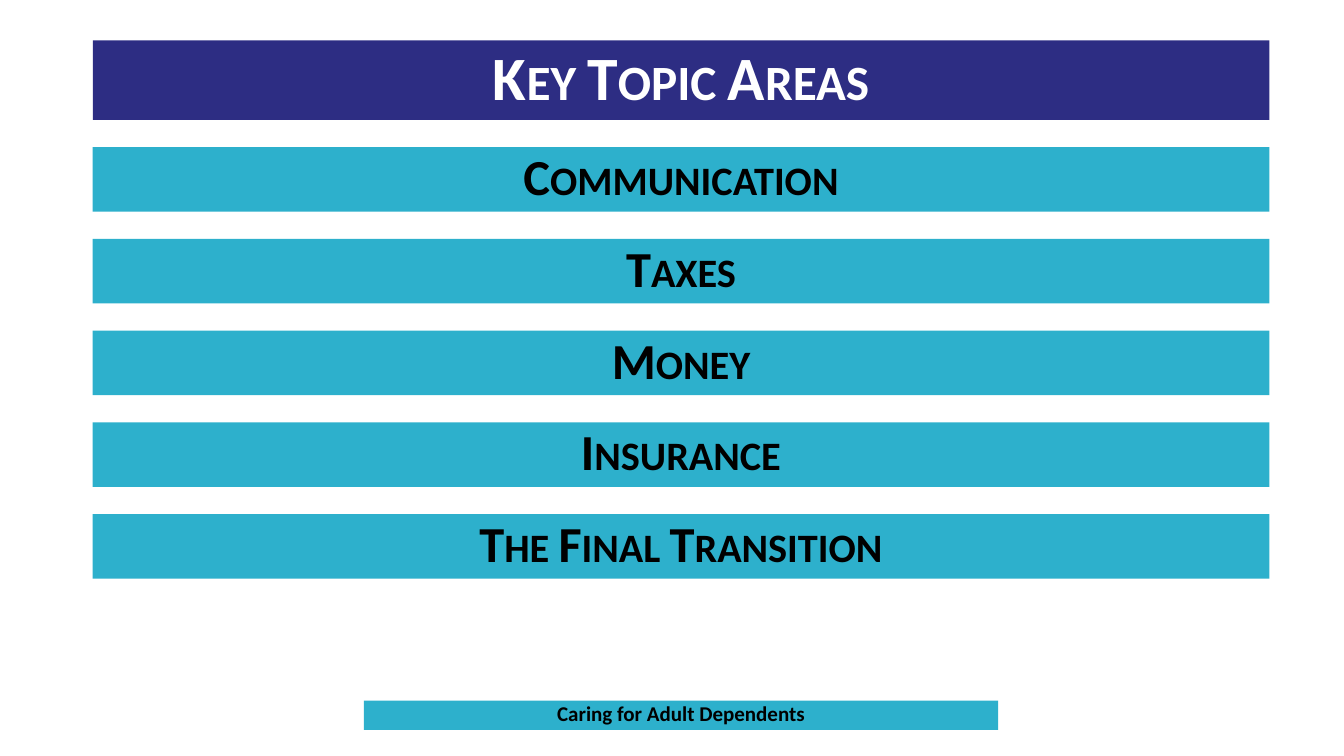
from dataclasses import dataclass

from pptx import Presentation
from pptx.dml.color import RGBColor
from pptx.enum.shapes import MSO_SHAPE
from pptx.enum.text import MSO_ANCHOR, MSO_AUTO_SIZE, PP_ALIGN
from pptx.shapes.autoshape import Shape
from pptx.slide import Slide
from pptx.util import Inches, Pt

NAVY = RGBColor(0x2D, 0x2D, 0x83)
TEAL = RGBColor(0x2D, 0xB0, 0xCC)
WHITE = RGBColor(0xFF, 0xFF, 0xFF)
BLACK = RGBColor(0x00, 0x00, 0x00)

SLIDE_W, SLIDE_H = 13.33, 7.5
CENTER = 6.755
BAR_W = 11.67
TOPIC_TOP, TOPIC_H, TOPIC_PITCH = 1.46, 0.64, 0.91
TOPICS = ["Communication", "Taxes", "Money", "Insurance", "The Final Transition"]


@dataclass(frozen=True)
class Bar:
    """A centred band with one line of bold text."""

    text: str
    top: float
    height: float
    size: int
    width: float = BAR_W
    fill: RGBColor = TEAL
    color: RGBColor = BLACK
    small_caps: bool = True


def format_bar(sp: Shape, bar: Bar) -> None:
    """Place, fill and letter a shape as the bar describes."""
    sp.left, sp.top = Inches(CENTER - bar.width / 2), Inches(bar.top)
    sp.width, sp.height = Inches(bar.width), Inches(bar.height)
    sp.fill.solid()
    sp.fill.fore_color.rgb = bar.fill
    sp.line.fill.background()
    tf = sp.text_frame
    tf.text = bar.text
    tf.word_wrap = True
    tf.auto_size = MSO_AUTO_SIZE.NONE
    tf.vertical_anchor = MSO_ANCHOR.MIDDLE
    tf.margin_top = tf.margin_bottom = 0
    p = tf.paragraphs[0]
    p.alignment = PP_ALIGN.CENTER
    p.line_spacing = 0.9
    r = p.runs[0]
    r.font.name = "Calibri"
    r.font.size = Pt(bar.size)
    r.font.bold = True
    r.font.color.rgb = bar.color
    if bar.small_caps:
        r._r.get_or_add_rPr().set("cap", "small")


def add_bar(s: Slide, bar: Bar) -> None:
    """Add a bar to the slide as a plain rectangle."""
    sp = s.shapes.add_shape(MSO_SHAPE.RECTANGLE, 0, 0, 0, 0)
    sp.shadow.inherit = False
    format_bar(sp, bar)


def main() -> None:
    """Build the slide and save it."""
    prs = Presentation()
    prs.slide_width, prs.slide_height = Inches(SLIDE_W), Inches(SLIDE_H)
    s = prs.slides.add_slide(prs.slide_layouts[5])
    format_bar(s.shapes.title, Bar("Key Topic Areas", 0.4, 0.79, 44, fill=NAVY, color=WHITE))
    for row, topic in enumerate(TOPICS):
        add_bar(s, Bar(topic, TOPIC_TOP + row * TOPIC_PITCH, TOPIC_H, 36))
    add_bar(s, Bar("Caring for Adult Dependents", 6.95, 0.29, 15, width=6.29, small_caps=False))
    prs.save("out.pptx")


if __name__ == "__main__":
    main()
